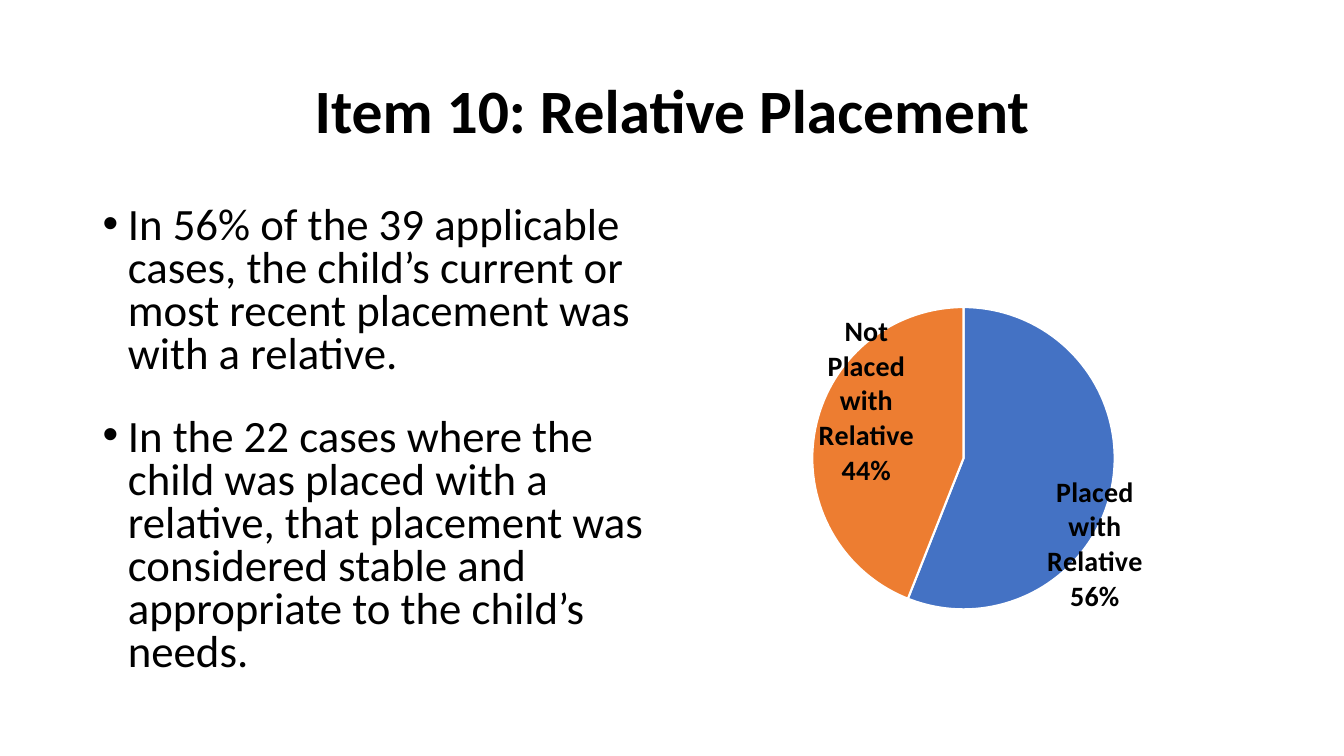
import pptx
import pptx.util
import pptx.dml.color
import pptx.chart.data
import pptx.enum.chart
import pptx.enum.text
import pptx.oxml
import pptx.oxml.ns
from pptx.util import Inches

qn = pptx.oxml.ns.qn


def color(hex_value):
    return pptx.dml.color.RGBColor.from_string(hex_value)


def style(font, size, bold=False):
    font.name = "Calibri"
    font.size = pptx.util.Pt(size)
    font.bold = bold
    font.color.rgb = color("000000")


def layout_xml(x, y, w=None, h=None):
    inner = w is not None
    parts = '<c:layoutTarget val="inner"/><c:xMode val="edge"/><c:yMode val="edge"/>' if inner else ""
    parts += f'<c:x val="{x}"/><c:y val="{y}"/>'
    if inner:
        parts += f'<c:w val="{w}"/><c:h val="{h}"/>'
    return pptx.oxml.parse_xml(
        f'<c:layout {pptx.oxml.ns.nsdecls("c")}><c:manualLayout>{parts}</c:manualLayout></c:layout>'
    )


deck = pptx.Presentation()
deck.slide_width = Inches(13.33)
deck.slide_height = Inches(7.5)
slide = deck.slides.add_slide(deck.slide_layouts[6])

heading = slide.shapes.add_textbox(Inches(0.92), Inches(0.4), Inches(11.5), Inches(1.45)).text_frame
heading.word_wrap = True
heading.vertical_anchor = pptx.enum.text.MSO_ANCHOR.MIDDLE
title = heading.paragraphs[0]
title.text = "Item 10: Relative Placement"
title.alignment = pptx.enum.text.PP_ALIGN.CENTER
title.line_spacing = 0.9
style(title.font, 44, True)

findings = [
    ("In 56% of the 39 applicable cases, the child’s current or most recent placement was with a relative.", 18),
    ("In the 22 cases where the child was placed with a relative, that placement was considered stable "
     "and appropriate to the child’s needs.", 0),
]
body = slide.shapes.add_textbox(Inches(0.92), Inches(2), Inches(5.67), Inches(4.76)).text_frame
body.word_wrap = True
for index, (finding, space_after) in enumerate(findings):
    bullet = body.add_paragraph() if index else body.paragraphs[0]
    bullet.text = finding
    bullet.line_spacing = 0.8
    bullet.space_before = pptx.util.Pt(10)
    bullet.space_after = pptx.util.Pt(space_after)
    style(bullet.font, 32)
    properties = bullet._p.get_or_add_pPr()
    properties.set("marL", str(Inches(0.25)))
    properties.set("indent", str(Inches(-0.25)))
    for tag, attribute, value in (("buFont", "typeface", "Arial"), ("buChar", "char", "•")):
        mark = pptx.oxml.parse_xml(f'<a:{tag} {pptx.oxml.ns.nsdecls("a")} {attribute}="{value}"/>')
        properties.insert_element_before(mark, "a:tabLst", "a:defRPr", "a:extLst")

placements = pptx.chart.data.CategoryChartData(number_format="0")
placements.categories = ["Placed with Relative", "Not Placed with Relative"]
placements.add_series("Series 1", [56, 44])
pie = slide.shapes.add_chart(
    pptx.enum.chart.XL_CHART_TYPE.PIE, Inches(6.75), Inches(2), Inches(5.67), Inches(4.76), placements
).chart
pie.has_legend = False
pie.has_title = False
style(pie.font, 10)
plot = pie.plots[0]
plot.vary_by_categories = True

plot_area = pie._chartSpace.chart.plotArea
for old_layout in plot_area.findall(qn("c:layout")):
    plot_area.remove(old_layout)
plot_area.insert(0, layout_xml(0.23, 0.22, 0.53, 0.63))

labels = plot.series[0].data_labels
labels.show_percentage = True
labels.show_category_name = True
labels.show_value = False
labels.number_format = "0%"
labels.number_format_is_linked = False
style(labels.font, 20, True)

slices = [("4472C4", 0.1, 0.15), ("ED7D31", -0.04, -0.09)]
for index, (fill, shift_x, shift_y) in enumerate(slices):
    point = plot.series[0].points[index]
    point.format.fill.solid()
    point.format.fill.fore_color.rgb = color(fill)
    point.format.line.color.rgb = color("FFFFFF")
    point.format.line.width = pptx.util.Pt(1.5)
    style(point.data_label.font, 20, True)
    point.data_label.position = pptx.enum.chart.XL_LABEL_POSITION.CENTER
    label = labels._element.findall(qn("c:dLbl"))[index]
    label.insert(1, layout_xml(shift_x, shift_y))
    for flag, shown in (("showVal", "0"), ("showCatName", "1"), ("showPercent", "1")):
        label.find(qn(f"c:{flag}")).set("val", shown)
    label.append(pptx.oxml.parse_xml(f'<c:separator {pptx.oxml.ns.nsdecls("c")}>\n</c:separator>'))

deck.save("out.pptx")
